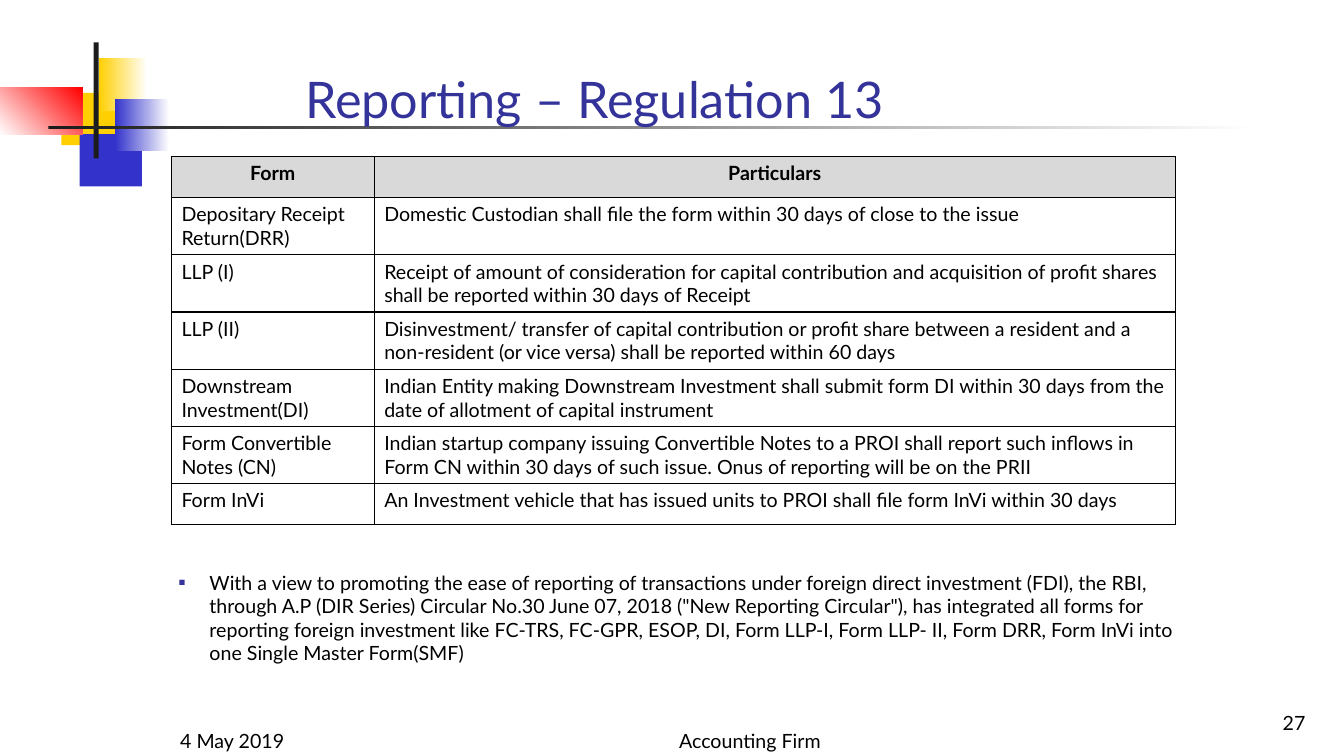
"""Builds the slide on reporting forms under Regulation 13."""
from lxml import etree
from pptx import Presentation
from pptx.dml.color import RGBColor
from pptx.enum.shapes import MSO_SHAPE
from pptx.enum.text import MSO_ANCHOR, PP_ALIGN
from pptx.oxml.ns import qn
from pptx.util import Cm, Pt

RECTANGLE = MSO_SHAPE.RECTANGLE
LEFT, CENTER, RIGHT = PP_ALIGN.LEFT, PP_ALIGN.CENTER, PP_ALIGN.RIGHT
TOP, BOTTOM = MSO_ANCHOR.TOP, MSO_ANCHOR.BOTTOM

FONT = "Lato"
BLACK, WHITE, INK, INDIGO = "000000", "FFFFFF", "1C1C1C", "333399"
YELLOW, BLUE, RED, HEADER_GREY = "FFCF01", "3333CC", "FF0000", "D9D9D9"

# (left, top, width, height), colours, gradient angle
ORNAMENT = [
    ((1.55, 2.34, 1.63, 1.32), [YELLOW], 0),
    ((2.01, 3.38, 1.57, 1.32), [BLUE], 0),
    ((2.49, 1.47, 1.22, 1.32), [YELLOW, WHITE], 0),
    ((2.9, 2.49, 1.37, 1.32), [BLUE, WHITE], 0),
    ((0, 2.21, 2.08, 1.17), [WHITE, RED], 45),
    ((2.36, 1.07, 0.13, 2.92), [INK], 0),
    ((1.22, 3.18, 30.48, 0.08), [INK, WHITE], 0),
]

TITLE = ("Reporting – Regulation 13", (7.44, 0.58, 21.64, 2.79))
FOOTERS = [
    ("4 May 2019", (4.29, 17.81, 7.06, 1.27), LEFT),
    ("Accounting Firm", (13.54, 17.81, 10.72, 1.27), CENTER),
    ("27", (26.09, 17.35, 7.06, 1.27), RIGHT),
]

FORMS = [
    ("Form", "Particulars"),
    ("Depositary Receipt Return(DRR)",
     "Domestic Custodian shall file the form within 30 days of close to the issue"),
    ("LLP (I)",
     "Receipt of amount of consideration for capital contribution and acquisition of "
     "profit shares shall be reported within 30 days of Receipt"),
    ("LLP (II)",
     "Disinvestment/ transfer of capital contribution or profit share between a resident "
     "and a non-resident (or vice versa) shall be reported within 60 days"),
    ("Downstream Investment(DI)",
     "Indian Entity making Downstream Investment shall submit form DI within 30 days "
     "from the date of allotment of capital instrument"),
    ("Form Convertible Notes (CN)",
     "Indian startup company issuing Convertible Notes to a PROI shall report such inflows "
     "in Form CN within 30 days of such issue. Onus of reporting will be on the PRII"),
    ("Form InVi",
     "An Investment vehicle that has issued units to PROI shall file form InVi within 30 days"),
]
TABLE_LEFT, TABLE_TOP, ROW_HEIGHT = 4.32, 3.94, 1.04
COLUMN_WIDTHS = (5.11, 20.19)

CIRCULAR = (
    "With a view to promoting the ease of reporting of transactions under foreign direct "
    "investment (FDI), the RBI, through A.P (DIR Series) Circular No.30 June 07, 2018 "
    "(\"New Reporting Circular\"), has integrated all forms for reporting foreign investment "
    "like FC-TRS, FC-GPR, ESOP, DI, Form LLP-I, Form LLP- II, Form DRR, Form InVi into one "
    "Single Master Form(SMF)",
    (4.24, 14.25, 25.7, 2.64))
BULLET, BULLET_INDENT = "▪", 0.79


def paint(color_format, hex_color):
    color_format.rgb = RGBColor.from_string(hex_color)


def write(frame, text, size=14, color=BLACK, align=LEFT, bold=False):
    frame.text = text
    paragraph = frame.paragraphs[0]
    paragraph.alignment = align
    font = paragraph.runs[0].font
    font.name, font.size, font.bold = FONT, Pt(size), bold
    paint(font.color, color)
    return paragraph


def add_text(slide, text, box, anchor=BOTTOM, **style):
    frame = slide.shapes.add_textbox(*map(Cm, box)).text_frame
    frame.word_wrap = True
    frame.vertical_anchor = anchor
    return write(frame, text, **style)


def add_ornament(slide, box, colors, angle):
    block = slide.shapes.add_shape(RECTANGLE, *map(Cm, box))
    block.shadow.inherit = False
    block.line.fill.background()
    if len(colors) == 1:
        block.fill.solid()
        paint(block.fill.fore_color, colors[0])
        return
    block.fill.gradient()
    block.fill.gradient_angle = angle
    for stop, color in zip(block.fill.gradient_stops, colors):
        paint(stop.color, color)


def add_borders(cell):
    properties = cell._tc.get_or_add_tcPr()
    for position, side in enumerate(("a:lnL", "a:lnR", "a:lnT", "a:lnB")):
        border = etree.Element(qn(side), w=str(Pt(1)))
        fill = etree.SubElement(border, qn("a:solidFill"))
        etree.SubElement(fill, qn("a:srgbClr"), val=BLACK)
        properties.insert(position, border)


def add_forms_table(slide):
    table = slide.shapes.add_table(
        len(FORMS), len(COLUMN_WIDTHS), Cm(TABLE_LEFT), Cm(TABLE_TOP),
        Cm(sum(COLUMN_WIDTHS)), Cm(ROW_HEIGHT * len(FORMS))).table
    table.first_row = table.horz_banding = False
    for column, width in zip(table.columns, COLUMN_WIDTHS):
        column.width = Cm(width)
    for r, form in enumerate(FORMS):
        table.rows[r].height = Cm(ROW_HEIGHT)
        for c, text in enumerate(form):
            cell = table.cell(r, c)
            is_header = r == 0
            write(cell.text_frame, text, bold=is_header,
                  align=CENTER if is_header else LEFT)
            if is_header:
                cell.fill.solid()
                paint(cell.fill.fore_color, HEADER_GREY)
            else:
                cell.fill.background()
            add_borders(cell)


def add_bullet(paragraph):
    properties = paragraph._p.get_or_add_pPr()
    properties.set("marL", str(Cm(BULLET_INDENT)))
    properties.set("indent", str(-Cm(BULLET_INDENT)))
    color = etree.SubElement(properties, qn("a:buClr"))
    etree.SubElement(color, qn("a:srgbClr"), val=INDIGO)
    etree.SubElement(properties, qn("a:buFont"), typeface=FONT)
    etree.SubElement(properties, qn("a:buChar"), char=BULLET)


def main():
    presentation = Presentation()
    presentation.slide_width, presentation.slide_height = Cm(33.87), Cm(19.05)
    slide = presentation.slides.add_slide(presentation.slide_layouts[6])
    for box, colors, angle in ORNAMENT:
        add_ornament(slide, box, colors, angle)
    for text, box, align in FOOTERS:
        add_text(slide, text, box, align=align)
    add_text(slide, *TITLE, size=36, color=INDIGO)
    add_forms_table(slide)
    add_bullet(add_text(slide, *CIRCULAR, anchor=TOP))
    presentation.save("out.pptx")


if __name__ == "__main__":
    main()
